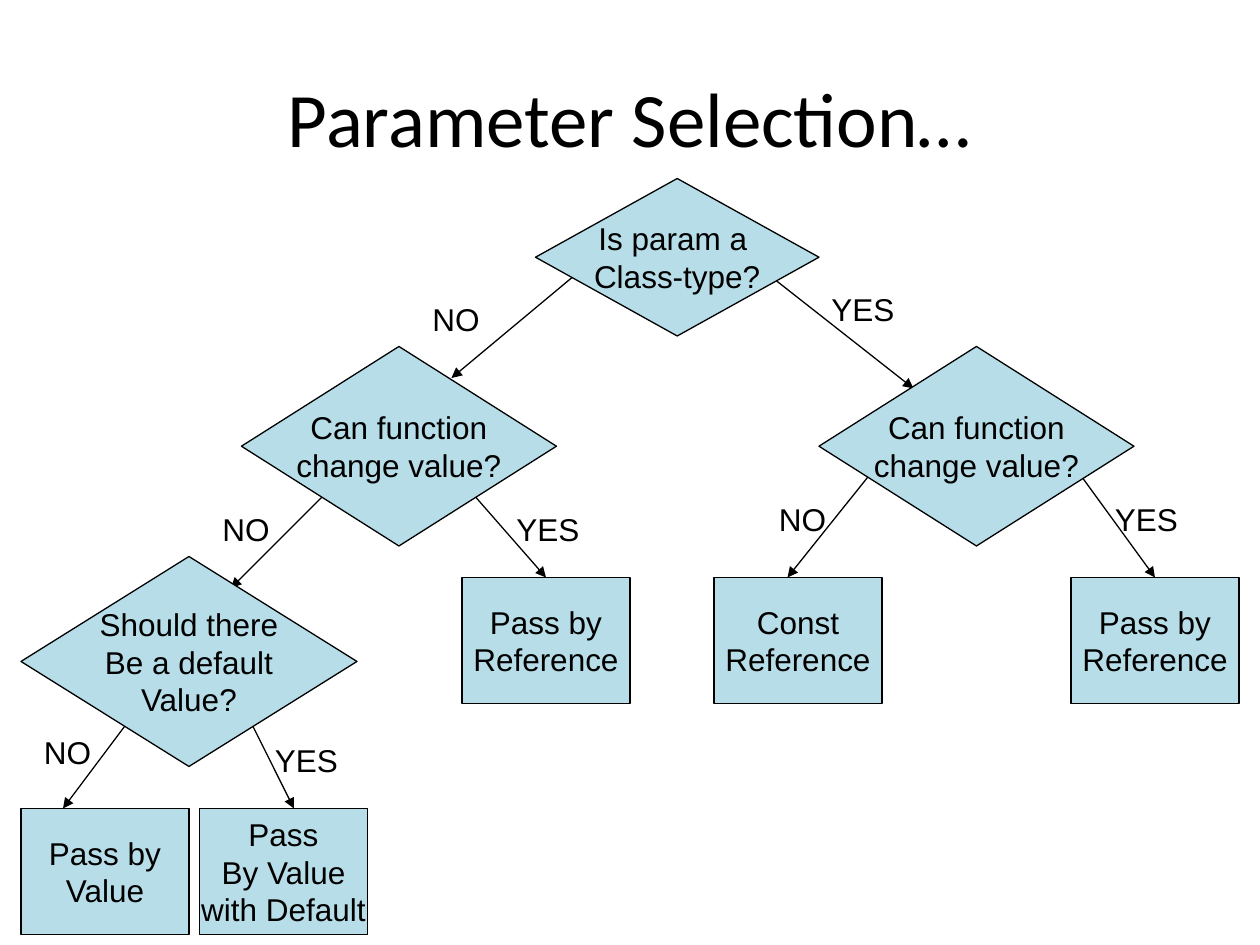
"""Build a decision tree slide about choosing how to pass a parameter."""
from lxml import etree
from pptx import Presentation
from pptx import util as u
from pptx.dml.color import RGBColor
from pptx.enum import shapes, text
from pptx.oxml.ns import qn

PX = 9525
BLACK = RGBColor(0, 0, 0)
WHITE = RGBColor(255, 255, 255)
BLUE = RGBColor(0xB7, 0xDE, 0xE8)
DIAMOND = shapes.MSO_SHAPE.DIAMOND
RECT = shapes.MSO_SHAPE.RECTANGLE

TESTS = [
    ("Is param a \nClass-type?", 408, 136, 216, 120),
    ("Can function\nchange value?", 184, 264, 240, 152),
    ("Can function\nchange value?", 624, 264, 240, 152),
    ("Should there\nBe a default\nValue?", 16, 424, 256, 160),
]
RESULTS = {
    "ref right": ("Pass by\nReference", 816, 440),
    "const": ("Const\nReference", 544, 440),
    "default": ("Pass\nBy Value\nwith Default", 152, 616),
    "value": ("Pass by\nValue", 16, 616),
    "ref left": ("Pass by\nReference", 352, 440),
}
BRANCHES = [
    ("NO", (440, 208), (344, 288), (320, 224), None),
    ("YES", (584, 208), (696, 296), (624, 216), None),
    ("NO", (248, 376), (176, 448), (160, 384), None),
    ("YES", (360, 376), (416, 440), (384, 384), "ref left"),
    ("NO", (664, 360), (600, 440), (584, 376), None),
    ("YES", (816, 352), (880, 440), (840, 376), "ref right"),
    ("NO", (96, 552), (48, 616), (24, 554), None),
    ("YES", (192, 552), (224, 616), (200, 560), None),
]


def px(*nums):
    return [u.Emu(n * PX) for n in nums]


def write(frame, words, size=18, face="Arial", align=text.PP_ALIGN.CENTER):
    frame.text = words
    for para in frame.paragraphs:
        para.alignment = align
        para.font.size = u.Pt(size)
        para.font.name = face
        para.font.color.rgb = BLACK


def add_title(slide, words):
    title = slide.shapes.title
    title.left, title.top, title.width, title.height = px(48, 29, 864, 120)
    title.text_frame.vertical_anchor = text.MSO_ANCHOR.MIDDLE
    write(title.text_frame, words, 44, "Calibri")


def add_node(slide, kind, words, *box):
    node = slide.shapes.add_shape(kind, *px(*box))
    node.shadow.inherit = False
    node.fill.solid()
    node.fill.fore_color.rgb = BLUE
    node.line.color.rgb = BLACK
    node.line.width = u.Pt(0.75)
    frame = node.text_frame
    frame.word_wrap = False
    frame.vertical_anchor = text.MSO_ANCHOR.MIDDLE
    write(frame, words)
    return node


def add_label(slide, words, spot):
    label = slide.shapes.add_textbox(*px(*spot, 72, 38))
    label.text_frame.word_wrap = True
    label.text_frame.auto_size = text.MSO_AUTO_SIZE.SHAPE_TO_FIT_TEXT
    write(label.text_frame, words, align=text.PP_ALIGN.LEFT)


def add_arrow(slide, start, end, node=None):
    """Draw an arrow that lies behind the nodes."""
    arrow = slide.shapes.add_connector(
        shapes.MSO_CONNECTOR.STRAIGHT, *px(*start, *end))
    if node is not None:
        arrow.end_connect(node, 0)
    arrow.line.color.rgb = BLACK
    arrow.line.width = u.Pt(0.75)
    etree.SubElement(arrow.line._get_or_add_ln(), qn("a:tailEnd"), type="triangle")
    etree.SubElement(arrow._element.spPr, qn("a:effectLst"))
    slide.shapes.title._element.addprevious(arrow._element)


def main():
    deck = Presentation()
    deck.slide_width, deck.slide_height = px(960, 720)
    slide = deck.slides.add_slide(deck.slide_layouts[5])
    slide.background.fill.solid()
    slide.background.fill.fore_color.rgb = WHITE
    add_title(slide, "Parameter Selection…")
    for words, *box in TESTS:
        add_node(slide, DIAMOND, words, *box)
    nodes = {key: add_node(slide, RECT, *spec, 128, 96)
             for key, spec in RESULTS.items()}
    for words, start, end, spot, key in BRANCHES:
        add_arrow(slide, start, end, nodes.get(key))
        add_label(slide, words, spot)
    deck.save("out.pptx")


if __name__ == "__main__":
    main()
